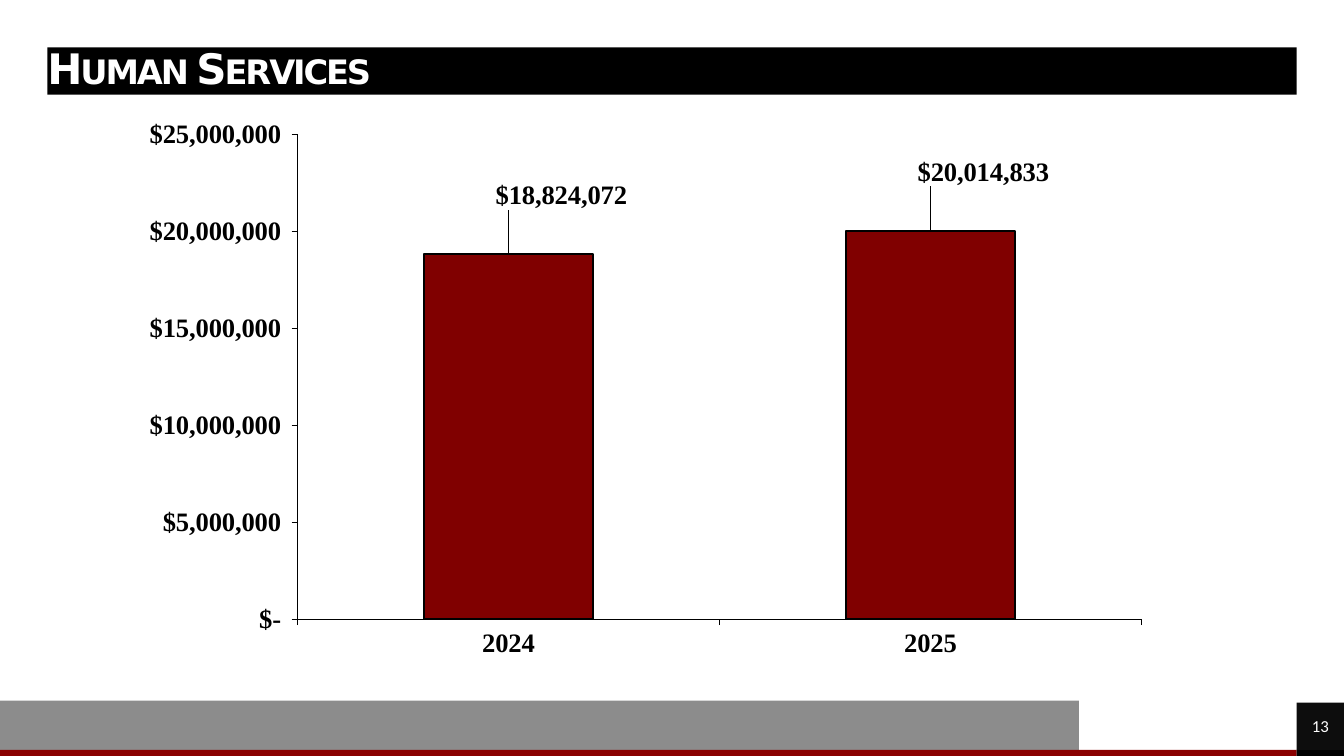
from lxml.etree import SubElement
from pptx import Presentation
from pptx.chart.data import CategoryChartData
from pptx.dml.color import RGBColor
from pptx.enum.chart import XL_CHART_TYPE, XL_LABEL_POSITION, XL_TICK_MARK
from pptx.enum.shapes import MSO_SHAPE
from pptx.enum.text import MSO_ANCHOR, PP_ALIGN
from pptx.oxml.ns import qn
from pptx.util import Inches, Pt

COLORS = {"black": "000000", "white": "FFFFFF", "red": "8A0000",
          "grey": "8C8C8C", "number": "0D0D0D", "bar": "800000"}
DOLLARS = r'_(\$* #,##0_);_(\$* \(#,##0\);_(\$* "-"_)'


def color(name):
    return RGBColor.from_string(COLORS[name])


def manual_layout(**settings):
    """Return a chart layout element holding the given settings."""
    layout = chart._chartSpace.makeelement(qn("c:layout"))
    manual = SubElement(layout, qn("c:manualLayout"))
    for tag, value in settings.items():
        SubElement(manual, qn("c:" + tag)).set("val", str(value))
    return layout


prs = Presentation()
prs.slide_width, prs.slide_height = Inches(13.33), Inches(7.5)
slide = prs.slides.add_slide(prs.slide_layouts[5])

# Footer bands and page number
footer = [
    (10.7, 7.44, 2.16, 0.06, "red", ""),
    (0, 6.95, 10.7, 0.49, "grey", ""),
    (0, 7.44, 10.7, 0.06, "red", ""),
    (12.86, 7.44, 0.47, 0.06, "black", ""),
    (12.86, 6.97, 0.47, 0.47, "number", "13"),
]
for left, top, width, height, fill, label in footer:
    band = slide.shapes.add_shape(
        MSO_SHAPE.RECTANGLE, Inches(left), Inches(top), Inches(width), Inches(height))
    band.shadow.inherit = False
    band.fill.solid()
    band.fill.fore_color.rgb = color(fill)
    band.line.fill.background()
    if label:
        page = band.text_frame
        page.margin_left = page.margin_right = page.margin_top = page.margin_bottom = 0
        page.vertical_anchor = MSO_ANCHOR.MIDDLE
        page.text = label
        page.paragraphs[0].alignment = PP_ALIGN.CENTER
        page_font = page.paragraphs[0].runs[0].font
        page_font.name, page_font.size = "Calibri", Pt(12)
        page_font.color.rgb = color("white")

# Title bar
title = slide.shapes.title
title.left, title.top = Inches(0.47), Inches(0.47)
title.width, title.height = Inches(12.39), Inches(0.47)
title.fill.solid()
title.fill.fore_color.rgb = color("black")
heading = title.text_frame
heading.margin_left = heading.margin_right = heading.margin_top = heading.margin_bottom = 0
heading.vertical_anchor = MSO_ANCHOR.MIDDLE
heading.text = "Human Services"
heading.paragraphs[0].alignment = PP_ALIGN.LEFT
heading.paragraphs[0].line_spacing = 0.9
heading_run = heading.paragraphs[0].runs[0]
heading_run.font.name, heading_run.font.size = "DejaVu Sans", Pt(30)
heading_run.font.bold = True
heading_run.font.color.rgb = color("white")
heading_run.font._element.set("cap", "small")
heading_run.font._element.set("spc", "-150")

# Spending chart
spending = CategoryChartData(number_format=DOLLARS)
spending.categories = ["2024", "2025"]
spending.add_series("Series 1", [18824072, 20014833])
chart = slide.shapes.add_chart(
    XL_CHART_TYPE.COLUMN_CLUSTERED, Inches(1.22), Inches(0.94),
    Inches(10.49), Inches(5.68), spending).chart
chart.has_legend = False
chart.has_title = False
chart.font.name, chart.font.size, chart.font.bold = "Times New Roman", Pt(19), True
chart.font.color.rgb = color("black")

plot = chart.plots[0]
plot.gap_width = 150
plot.vary_by_categories = False
plot_area = chart._chartSpace.chart.plotArea
for old_layout in plot_area.findall(qn("c:layout")):
    plot_area.remove(old_layout)
plot_area.insert(0, manual_layout(
    layoutTarget="inner", xMode="edge", yMode="edge",
    x=0.165, y=0.069, w=0.798, h=0.847))

# Axes
for axis in (chart.category_axis, chart.value_axis):
    axis.has_major_gridlines = False
    axis.major_tick_mark = XL_TICK_MARK.OUTSIDE
    axis.minor_tick_mark = XL_TICK_MARK.NONE
    axis.format.line.color.rgb = color("black")
    axis.format.line.width = Pt(0.3)
dollar_axis = chart.value_axis
dollar_axis.minimum_scale, dollar_axis.maximum_scale = 0, 25000000
dollar_axis.major_unit = 5000000
dollar_axis.tick_labels.number_format = DOLLARS
dollar_axis.tick_labels.number_format_is_linked = False

# Bars and their shifted value labels
bars = plot.series[0]
bars.format.fill.solid()
bars.format.fill.fore_color.rgb = color("bar")
bars.format.line.color.rgb = color("black")
bars.format.line.width = Pt(1.19)
amounts = bars.data_labels
amounts.show_value = True
amounts.number_format = DOLLARS
amounts.number_format_is_linked = False
for index, (shift_x, shift_y) in enumerate([(0.05, -0.07), (0.05, -0.07)]):
    amount = bars.points[index].data_label
    amount.font.name, amount.font.size, amount.font.bold = "Times New Roman", Pt(19), True
    amount.font.color.rgb = color("black")
    amount.position = XL_LABEL_POSITION.OUTSIDE_END
    label_xml = amounts._element.findall(qn("c:dLbl"))[index]
    label_xml.insert(1, manual_layout(x=shift_x, y=shift_y))

prs.save("out.pptx")
